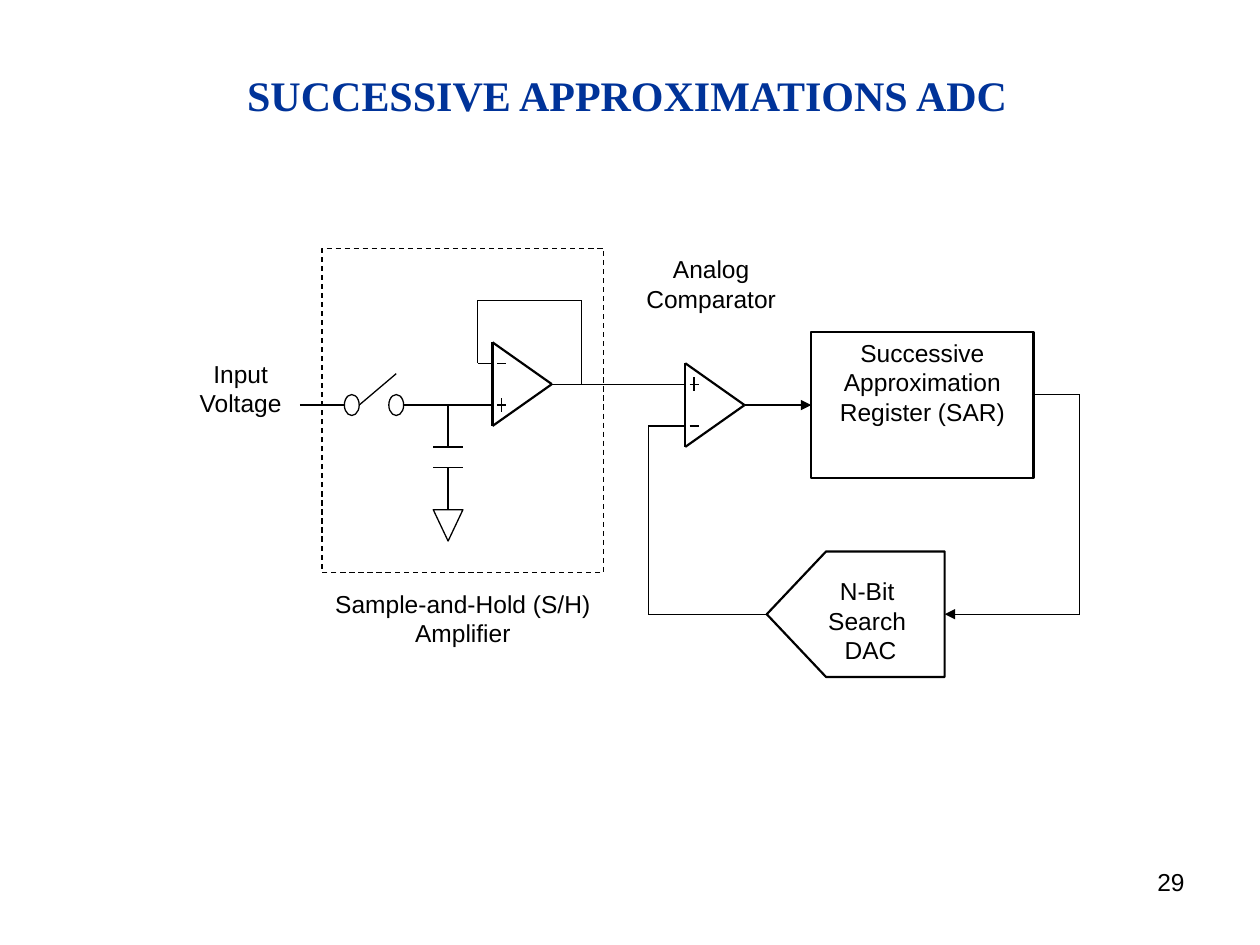
from itertools import pairwise

from lxml.etree import SubElement
from pptx import Presentation
from pptx.dml.color import RGBColor
from pptx.enum.dml import MSO_LINE
from pptx.enum.shapes import MSO_CONNECTOR, MSO_SHAPE
from pptx.enum.text import MSO_ANCHOR, PP_ALIGN
from pptx.oxml.ns import qn
from pptx.util import Inches, Pt

THEME = {
    "ink": RGBColor(0, 0, 0), "paper": RGBColor(255, 255, 255),
    "title": RGBColor(0x00, 0x33, 0x99),
    "title_font": "Times New Roman", "body_font": "Arial",
    "title_size": 24, "body_size": 14, "thin": 0.75, "bold": 1.25,
}

# Circuit grid: everything below is in columns and rows from this corner
WIDTH, HEIGHT = 10, 7.5
LEFT, TOP = 2.38, 1.97
COL, ROW = WIDTH / 85, 0.083

# Content
TITLE = " SUCCESSIVE APPROXIMATIONS ADC"
PAGE = "29"
SAR_LINES = ["Successive", "Approximation", "Register (SAR)"]
DAC_LINES = ["N-Bit ", "Search ", "DAC"]
LABELS = [  # lines, (column, row, columns, rows)
    (["Input", "Voltage"], (-8, 10, 8, 10)),
    (["Sample-and-Hold (S/H) Amplifier"], (1.5, 32, 19, 11)),
    (["Analog", "Comparator"], (22, 0, 11.5, 10)),
]
SAR = (34.5, 8, 19 - 4, 14)
SAMPLE_HOLD = (1.5, 0, 19, 31)
DAC_OUTLINE = [(35.5, 29), (43.5, 29), (43.5, 41), (35.5, 41), (31.5, 35)]
SWITCH_CONTACTS = [(3, 14, 1, 2), (6, 14, 1, 2)]
GROUND = (9, 25, 2, 3)
OP_AMPS = [(13, 13, "-+"), (26, 15, "+-")]  # column, middle row, input signs
WIRES = [
    [(0, 15), (2, 15), (3, 15)],                # input
    [(4, 15), (6.5, 12)],                       # switch blade
    [(7, 15), (8, 15), (12, 15)],               # switch to amplifier
    [(12, 11), (12, 5), (19, 5), (19, 13)],     # amplifier feedback
    [(17, 13), (25, 13)],                       # amplifier to comparator
    [(10, 15), (10, 19)],                       # capacitor lead
    [(9, 19), (11, 19)],                        # capacitor plates
    [(9, 21), (11, 21)],
    [(10, 21), (10, 25)],                       # capacitor to ground
    [(31.5, 35), (23.5, 35), (23.5, 17), (25, 17)],  # DAC to comparator
]
REGISTER_TO_DAC = [(49.5, 14), (52.6, 14), (52.6, 35), (43.5, 35)]
COMPARATOR_TO_REGISTER = [(30, 15), (34.5, 15)]

deck = Presentation()
deck.slide_width, deck.slide_height = Inches(WIDTH), Inches(HEIGHT)
slide = deck.slides.add_slide(deck.slide_layouts[6])
shapes = slide.shapes


def point(column, row):
    return Inches(LEFT + column * COL), Inches(TOP + row * ROW)


def area(column, row, columns, rows):
    return *point(column, row), Inches(columns * COL), Inches(rows * ROW)


def outline(shape, weight, filled=False):
    shape.shadow.inherit = False
    if filled:
        shape.fill.solid()
        shape.fill.fore_color.rgb = THEME["paper"]
    else:
        shape.fill.background()
    shape.line.color.rgb = THEME["ink"]
    shape.line.width = Pt(weight)
    return shape


def write(shape, lines, align=PP_ALIGN.CENTER, role="body", color="ink"):
    frame = shape.text_frame
    frame.word_wrap = True
    frame.vertical_anchor = MSO_ANCHOR.TOP
    for index, line in enumerate(lines):
        paragraph = frame.add_paragraph() if index else frame.paragraphs[0]
        paragraph.alignment = align
        run = paragraph.add_run()
        run.text = line
        run.font.name = THEME[role + "_font"]
        run.font.size = Pt(THEME[role + "_size"])
        run.font.bold = role == "title"
        run.font.color.rgb = THEME[color]
    return frame


def wire(points, weight=THEME["thin"], arrow=False):
    for start, end in pairwise(points):
        segment = shapes.add_connector(MSO_CONNECTOR.STRAIGHT, *point(*start), *point(*end))
        segment.line.color.rgb = THEME["ink"]
        segment.line.width = Pt(weight)
        SubElement(segment._element.spPr, qn("a:effectLst"))
    if arrow:
        SubElement(segment.line._get_or_add_ln(), qn("a:tailEnd"), type="triangle")
    return segment


def op_amp(column, middle, signs):
    top, tip, bottom = (column, middle - 4), (column + 4, middle), (column, middle + 4)
    wire([bottom, top, tip, bottom], THEME["bold"])
    for sign, row in zip(signs, (middle - 2, middle + 2)):
        wire([(column, row), (column - 1, row)])
        wire([(column + 0.3, row), (column + 0.9, row)])
        if sign == "+":
            wire([(column + 0.6, row - 0.65), (column + 0.6, row + 0.65)])


# Register and DAC
register = outline(shapes.add_shape(MSO_SHAPE.RECTANGLE, *area(*SAR)), THEME["bold"], True)
write(register, SAR_LINES)
builder = shapes.build_freeform(*point(*DAC_OUTLINE[0]), scale=1.0)
builder.add_line_segments([point(*corner) for corner in DAC_OUTLINE[1:]], close=True)
outline(builder.convert_to_shape(), THEME["bold"])
dac_text = write(shapes.add_textbox(*area(32.5, 28, 12, 13)), DAC_LINES)
dac_text.margin_top = Inches(0.28)

# Wiring and amplifiers
for route in WIRES:
    wire(route)
wire(REGISTER_TO_DAC, arrow=True)
wire(COMPARATOR_TO_REGISTER, arrow=True).end_connect(register, 1)
for amplifier in OP_AMPS:
    op_amp(*amplifier)

# Switch contacts, ground and the dashed sample-and-hold frame
for contact in SWITCH_CONTACTS:
    outline(shapes.add_shape(MSO_SHAPE.OVAL, *area(*contact)), THEME["thin"])
ground = shapes.add_shape(MSO_SHAPE.ISOSCELES_TRIANGLE, *area(*GROUND))
outline(ground, THEME["thin"], True).rotation = 180
frame_box = shapes.add_shape(MSO_SHAPE.RECTANGLE, *area(*SAMPLE_HOLD))
outline(frame_box, THEME["thin"]).line.dash_style = MSO_LINE.DASH

# Labels, title and page number
for lines, place in LABELS:
    write(shapes.add_textbox(*area(*place)), lines)
heading = shapes.add_textbox(Inches(1.78), Inches(0.5), Inches(6.39), Inches(0.5))
write(heading, [TITLE], PP_ALIGN.LEFT, "title", "title").word_wrap = False
page = shapes.add_textbox(Inches(7.17), Inches(6.83), Inches(2.33), Inches(0.52))
write(page, [PAGE], PP_ALIGN.RIGHT)

deck.save("out.pptx")
